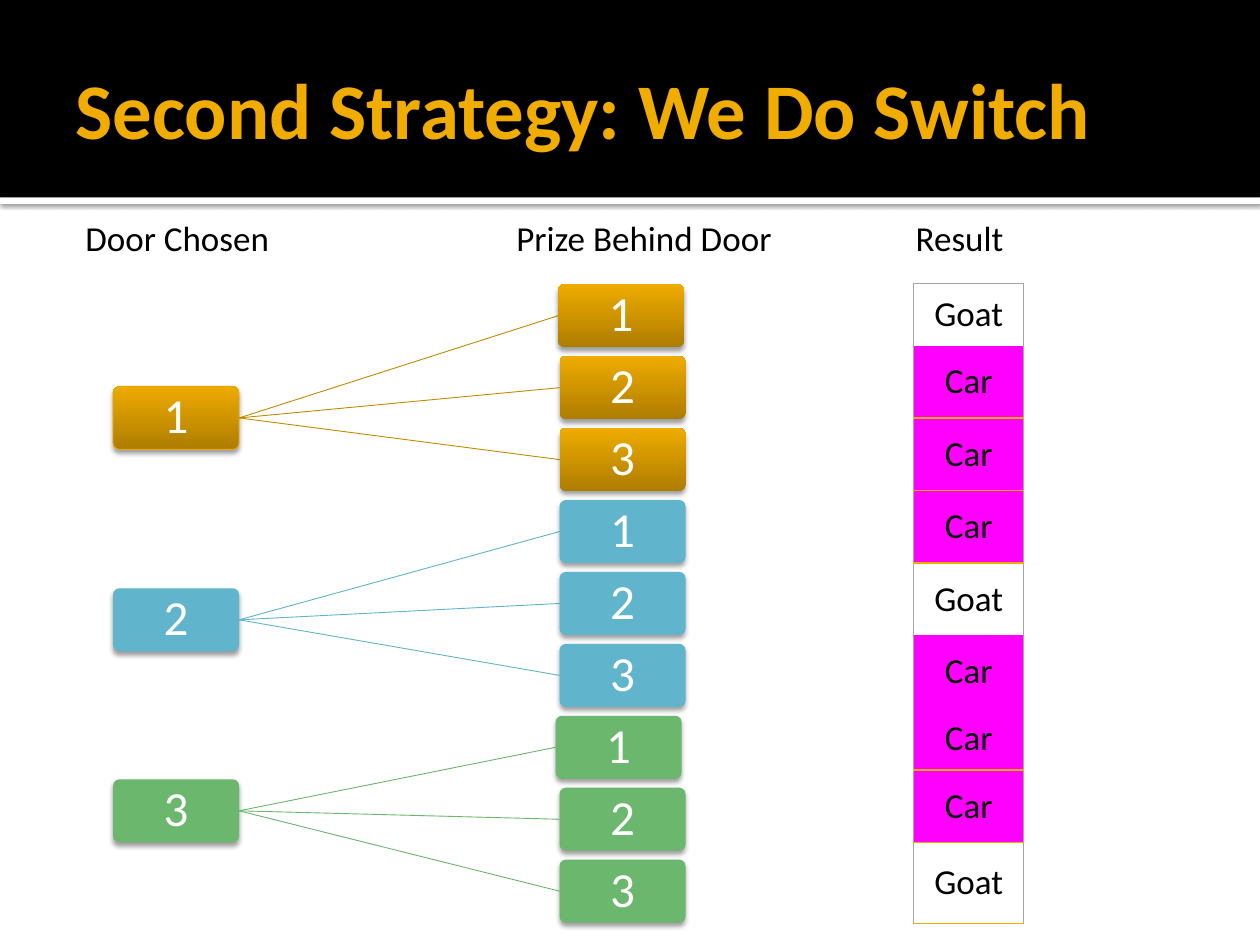
from dataclasses import dataclass

from lxml.etree import SubElement
from pptx import Presentation
from pptx.dml.color import RGBColor
from pptx.enum.shapes import MSO_CONNECTOR, MSO_SHAPE
from pptx.enum.text import MSO_ANCHOR, PP_ALIGN
from pptx.oxml.ns import qn
from pptx.util import Cm, Pt

BLACK = RGBColor(0, 0, 0)
WHITE = RGBColor(255, 255, 255)
GOLD = RGBColor(0xF0, 0xAD, 0x00)
EDGE = RGBColor(0xEB, 0xA9, 0x00)
DARK = RGBColor(0xAE, 0x7D, 0x00)
LIGHT = RGBColor(0xEE, 0xAB, 0x00)
BRONZE = RGBColor(0xC0, 0x8B, 0x00)
BLUE = RGBColor(0x60, 0xB5, 0xCC)
GREEN = RGBColor(0x6B, 0xB7, 0x6D)
PINK = RGBColor(255, 0, 255)
GREY = RGBColor(0xA6, 0xA6, 0xA6)

BOX_W, BOX_H = 2.54, 1.27
DOOR_X, PRIZE_X = 2.28, 11.28
PRIZE_Y, STEP = 5.73, 1.45


@dataclass
class Label:
    text: str
    left: float
    width: float
    top: float = 4.24
    height: float = 1.12


@dataclass
class Tree:
    door: int
    top: float
    color: RGBColor
    shift: float = 0  # offset of the first prize box
    shaded: bool = False


@dataclass
class Row:
    prize: str
    height: float
    under: RGBColor | None = None


LABELS = [
    Label("Door Chosen", 1.47, 4.45),
    Label("Prize Behind Door", 10.16, 6.35),
    Label("Result", 18.21, 4.45),
]
TREES = [
    Tree(1, 7.79, BRONZE, -0.03, True),
    Tree(2, 11.86, BLUE),
    Tree(3, 15.71, GREEN, -0.08),
]
ROWS = [
    Row("Goat", 1.25),
    Row("Car", 1.46, GOLD),
    Row("Car", 1.46, GOLD),
    Row("Car", 1.46, GOLD),
    Row("Goat", 1.46),
    Row("Car", 1.46),
    Row("Car", 1.25, GOLD),
    Row("Car", 1.46, GOLD),
    Row("Goat", 1.64, GOLD),
]


def put(target, values: dict) -> None:
    for name, value in values.items():
        setattr(target, name, value)


def write(frame, text: str, size: int, color: RGBColor,
          bold: bool = False, align=PP_ALIGN.LEFT) -> None:
    para = frame.paragraphs[0]
    para.alignment = align
    run = para.add_run()
    run.text = text
    put(run.font, {"size": Pt(size), "name": "Calibri", "bold": bold})
    run.font.color.rgb = color


def shade(shape, blur: float, dist: float, alpha: int) -> None:
    """Cast a black shadow straight down."""
    shape.shadow.inherit = False
    effects = shape._element.spPr.find(qn("a:effectLst"))
    outer = SubElement(effects, qn("a:outerShdw"), blurRad=str(Pt(blur)),
                       dist=str(Pt(dist)), dir="5400000", algn="t", rotWithShape="0")
    tint = SubElement(outer, qn("a:srgbClr"), val=str(BLACK))
    SubElement(tint, qn("a:alpha"), val=str(alpha * 1000))


def add_band(slide, top: float, height: float, color: RGBColor):
    band = slide.shapes.add_shape(MSO_SHAPE.RECTANGLE, 0, Cm(top), Cm(25.4), Cm(height))
    band.shadow.inherit = False
    band.fill.solid()
    band.fill.fore_color.rgb = color
    band.line.fill.background()
    return band


def add_label(slide, label: Label):
    box = slide.shapes.add_textbox(Cm(label.left), Cm(label.top),
                                   Cm(label.width), Cm(label.height))
    box.text_frame.word_wrap = True
    return box.text_frame


def add_box(slide, left: float, top: float, number: int, tree: Tree):
    box = slide.shapes.add_shape(MSO_SHAPE.ROUNDED_RECTANGLE, Cm(left), Cm(top),
                                 Cm(BOX_W), Cm(BOX_H))
    box.adjustments[0] = 0.1
    if tree.shaded:
        box.fill.gradient()
        box.fill.gradient_angle = 90
        for stop, color in zip(box.fill.gradient_stops, (DARK, LIGHT)):
            stop.color.rgb = color
    else:
        box.fill.solid()
        box.fill.fore_color.rgb = tree.color
    box.line.fill.background()
    shade(box, 3.1, 2, 38)
    inset = Cm(0.05)
    put(box.text_frame, {
        "margin_left": inset, "margin_right": inset,
        "margin_top": inset, "margin_bottom": inset,
        "vertical_anchor": MSO_ANCHOR.MIDDLE, "word_wrap": True,
    })
    write(box.text_frame, str(number), 28, WHITE, align=PP_ALIGN.CENTER)
    box.text_frame.paragraphs[0].line_spacing = 0.9
    return box


def add_branch(slide, start: tuple, end: tuple, color: RGBColor) -> None:
    line = slide.shapes.add_connector(MSO_CONNECTOR.STRAIGHT,
                                      *(Cm(v) for v in start + end))
    line.line.color.rgb = color
    line.line.width = Pt(0.5)
    SubElement(line._element.spPr, qn("a:effectLst"))


def add_tree(slide, tree: Tree, first: int) -> None:
    root = add_box(slide, DOOR_X, tree.top, tree.door, tree)
    if tree.shaded:
        root.line.color.rgb = EDGE
        root.line.width = Pt(0.5)
    start = (DOOR_X + BOX_W, tree.top + BOX_H / 2)
    for i in range(3):
        left = PRIZE_X + (tree.shift if i == 0 else 0)
        top = PRIZE_Y + STEP * (first + i)
        add_branch(slide, start, (left, top + BOX_H / 2), tree.color)
        add_box(slide, left, top, i + 1, tree)


def add_edge(cell, side: str, color: RGBColor | None, width: float) -> None:
    edge = SubElement(cell._tc.get_or_add_tcPr(), qn(f"a:ln{side}"), w=str(Pt(width)))
    if color is None:
        SubElement(edge, qn("a:noFill"))
    else:
        fill = SubElement(edge, qn("a:solidFill"))
        SubElement(fill, qn("a:srgbClr"), val=str(color))


def add_results(slide) -> None:
    height = sum(row.height for row in ROWS)
    table = slide.shapes.add_table(len(ROWS), 1, Cm(18.42), Cm(5.72),
                                   Cm(2.22), Cm(height)).table
    put(table, {"first_row": False, "horz_banding": False})
    table.columns[0].width = Cm(2.22)
    above = GREY
    for i, row in enumerate(ROWS):
        table.rows[i].height = Cm(row.height)
        cell = table.cell(i, 0)
        for side, color, width in (("L", GREY, 0.5), ("R", GREY, 0.5),
                                   ("T", above, 1 if i else 0.5), ("B", row.under, 1)):
            add_edge(cell, side, color, width)
        above = row.under
        if row.prize == "Car":
            cell.fill.solid()
            cell.fill.fore_color.rgb = PINK
        else:
            cell.fill.background()
        cell.vertical_anchor = MSO_ANCHOR.MIDDLE
        write(cell.text_frame, row.prize, 20, BLACK, align=PP_ALIGN.CENTER)


def main() -> None:
    deck = Presentation()
    put(deck, {"slide_width": Cm(25.4), "slide_height": Cm(19.05)})
    slide = deck.slides.add_slide(deck.slide_layouts[6])
    shade(add_band(slide, 3.98, 0.13, WHITE), 2.5, 0.8, 60)
    add_band(slide, 0, 3.98, BLACK)
    for i, tree in enumerate(TREES):
        add_tree(slide, tree, 3 * i)
    title = add_label(slide, Label("", 1.27, 22.86, 0.43, 3.48))
    title.vertical_anchor = MSO_ANCHOR.MIDDLE
    write(title, "Second Strategy: We Do Switch", 45, GOLD, bold=True)
    for label in LABELS:
        write(add_label(slide, label), label.text, 20, BLACK)
    add_results(slide)
    deck.save("out.pptx")


if __name__ == "__main__":
    main()
